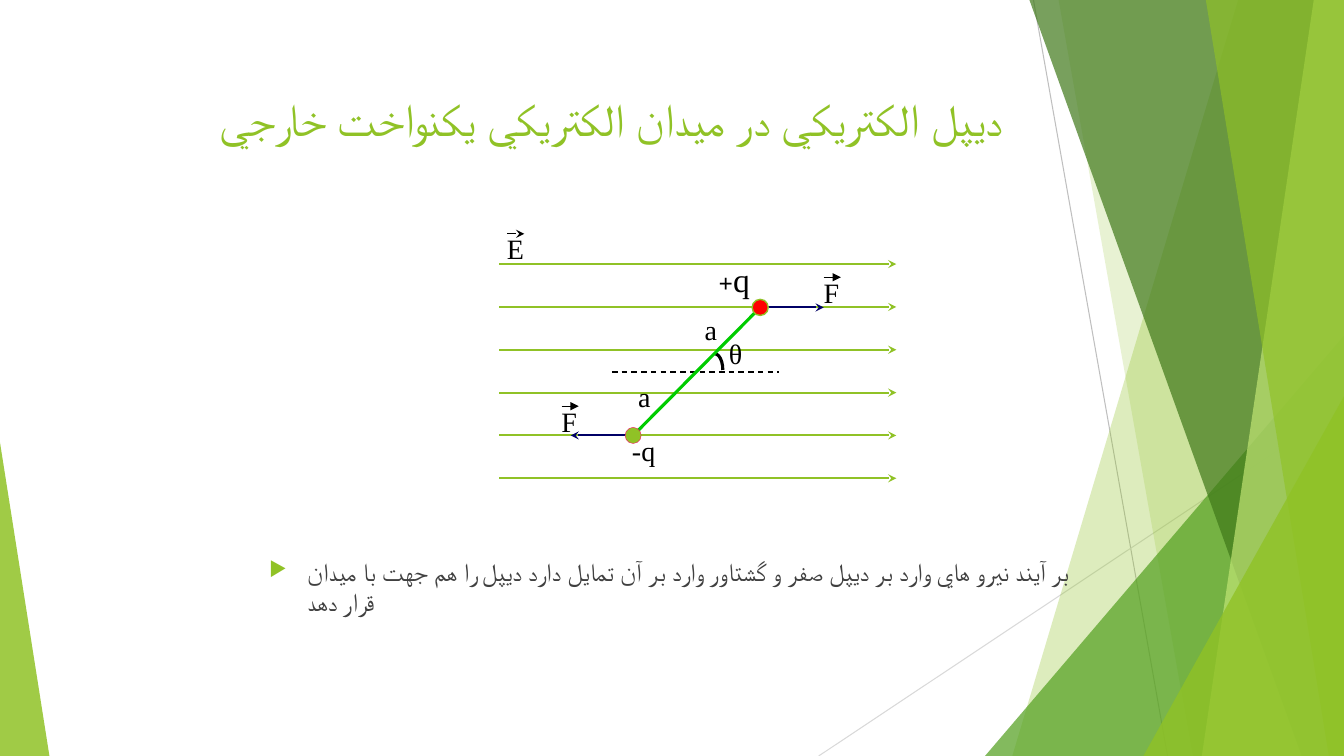
from lxml.etree import SubElement as Sub
from pptx import Presentation as Deck
from pptx.dml.color import RGBColor as Rgb
from pptx.enum.dml import MSO_LINE as Dash
from pptx.enum.shapes import MSO_CONNECTOR as Link, MSO_SHAPE as Form
from pptx.oxml.ns import qn
from pptx.util import Cm, Pt

LIME = Rgb(0x90, 0xC2, 0x26)
LEAF = Rgb(0x54, 0xA0, 0x21)
MOSS = Rgb(0x3F, 0x78, 0x19)
PALE = Rgb(0xC0, 0xE4, 0x74)
GRASS = Rgb(0x00, 0xCC, 0x00)
NAVY = Rgb(0x00, 0x00, 0x66)
RED = Rgb(0xFE, 0x00, 0x00)
PINK = Rgb(0xFF, 0x00, 0x66)
BLACK = Rgb(0x00, 0x00, 0x00)
DARK = Rgb(0x40, 0x40, 0x40)
GREY = Rgb(0xBF, 0xBF, 0xBF)
MIST = Rgb(0xD9, 0xD9, 0xD9)
WIDE, HIGH = 13.33, 7.5


def inch(size):
    return Cm(size * 2.54)


class Board:
    sans = "Lato"
    serif = "Times New Roman"

    def __init__(self, slide):
        self.slide = slide
        self.shapes = slide.shapes

    def paint(self, shape, fill=None, alpha=100, edge=None, thick=1):
        shape.shadow.inherit = False
        if fill is None:
            shape.fill.background()
        else:
            shape.fill.solid()
            shape.fill.fore_color.rgb = fill
            if alpha < 100:
                color = shape.element.spPr.find(".//" + qn("a:srgbClr"))
                Sub(color, qn("a:alpha"), val=str(alpha * 1000))
        if edge is None:
            shape.line.fill.background()
        else:
            shape.line.color.rgb = edge
            shape.line.width = Pt(thick)

    def shape(self, form, left, top, width, height, **style):
        item = self.shapes.add_shape(form, *map(inch, (left, top, width, height)))
        self.paint(item, **style)
        return item

    def wedge(self, left, top, right, tip, fill, alpha):
        item = self.shape(Form.ISOSCELES_TRIANGLE, left, top, right - left,
                          HIGH - top, fill=fill, alpha=alpha)
        item.adjustments[0] = tip

    def strip(self, top, base, fill, alpha):
        spots = [(top, 0), (WIDE, 0), (WIDE, HIGH), (base, HIGH)]
        first, *rest = [(inch(x), inch(y)) for x, y in spots]
        form = self.shapes.build_freeform(*first)
        form.add_line_segments(rest)
        self.paint(form.convert_to_shape(), fill, alpha)

    def line(self, x1, y1, x2, y2, color, thick, head=None, dash=None):
        item = self.shapes.add_connector(Link.STRAIGHT, *map(inch, (x1, y1, x2, y2)))
        item.line.color.rgb = color
        item.line.width = Pt(thick)
        if dash:
            item.line.dash_style = dash
        if head:
            Sub(item.element.spPr.find(qn("a:ln")), qn("a:tailEnd"), type=head)
        Sub(item.element.spPr, qn("a:effectLst"))

    def text(self, left, top, width, height, runs, color, font, wrap=False):
        box = self.shapes.add_textbox(*map(inch, (left, top, width, height)))
        box.text_frame.word_wrap = wrap
        para = box.text_frame.paragraphs[0]
        for words, size, bold in runs:
            run = para.add_run()
            run.text = words
            run.font.name = font
            run.font.size = Pt(size)
            run.font.bold = bold
            run.font.color.rgb = color
        return para

    def label(self, left, top, width, words):
        self.text(left, top, width, 0.43, [(words, 20, False)], BLACK, self.serif)

    def vector(self, left, top, name, head):
        self.label(left, top, 0.36, name)
        self.line(left + 0.1, top + 0.07, left + 0.27, top + 0.07, BLACK, 0.5, head)

    def bullet(self, para, color):
        props = para._p.get_or_add_pPr()
        props.set("marL", str(inch(0.38)))
        props.set("indent", str(-inch(0.38)))
        tint = Sub(props, qn("a:buClr"))
        Sub(tint, qn("a:srgbClr"), val=str(color))
        Sub(props, qn("a:buSzPct"), val="80000")
        Sub(props, qn("a:buChar"), char="▶")

    def dot(self, x, y, fill, edge, thick):
        self.shape(Form.OVAL, x - 0.08, y - 0.08, 0.16, 0.16,
                   fill=fill, edge=edge, thick=thick)


def scene(board):
    board.line(10.25, 0, 11.58, HIGH, GREY, 0.75)
    board.line(WIDE, 4.03, 8.12, HIGH, MIST, 0.75)
    board.strip(12.28, 10.04, LIME, 30)
    board.strip(10.5, 11.83, LIME, 20)
    board.wedge(9.77, 3.33, WIDE, 1, LEAF, 72)
    board.strip(10.21, 12.91, MOSS, 70)
    board.strip(13.03, 11.92, PALE, 70)
    board.strip(11.96, 13.18, LIME, 65)
    board.wedge(11.34, 3.93, WIDE, 1, LIME, 80)
    board.wedge(0, 4.39, 0.49, 0, LIME, 85)


def words(board):
    board.text(2.08, 0.86, 8.75, 0.92,
               [("ديپل الكتريكي در ميدان الكتريكي يكنواخت خارجي", 32.4, False)],
               LIME, board.sans, True)
    para = board.text(2.57, 5.47, 8.5, 1.5, [
        ("بر آيند نيرو هاي وارد بر ديپل صفر و گشتاور وارد بر آن تمايل دارد "
         "ديپل را هم جهت با ميدان قرار دهد", 18, False)], DARK, board.sans, True)
    board.bullet(para, LIME)


def field(board):
    board.shape(Form.ARC, 7.01, 3.51, 0.16, 0.32, edge=BLACK, thick=2.25)
    board.line(6.07, 3.69, 7.73, 3.69, BLACK, 1, dash=Dash.DASH)
    for row in range(6):
        y = 2.62 + row * 0.425
        board.line(4.95, y, 8.89, y, LIME, 1.5, "stealth")
    board.vector(4.93, 2.25, "E", "stealth")


def dipole(board):
    plus, minus = (7.54, 3.05), (6.28, 4.32)
    board.line(*plus, *minus, GRASS, 2.25)
    for (x, y), push in ((plus, 0.63), (minus, -0.62)):
        board.line(x, y, x + push, y, NAVY, 1.5, "stealth")
    board.dot(*plus, RED, LIME, 1)
    board.dot(*minus, LIME, PINK, 0.25)
    board.text(7.03, 2.52, 0.51, 0.5, [("+", 18, True), ("q", 24, False)],
               BLACK, board.serif)
    board.label(6.17, 4.25, 0.43, "-q")
    board.label(7.13, 3.29, 0.34, "θ")
    for left, top in ((6.23, 3.72), (6.89, 3.05)):
        board.label(left, top, 0.32, "a")
    for left, top in ((8.07, 2.68), (5.47, 3.96)):
        board.vector(left, top, "F", "triangle")


def main():
    deck = Deck()
    deck.slide_width, deck.slide_height = inch(WIDE), inch(HIGH)
    board = Board(deck.slides.add_slide(deck.slide_layouts[6]))
    for draw in (scene, words, field, dipole):
        draw(board)
    deck.save("out.pptx")


if __name__ == "__main__":
    main()
